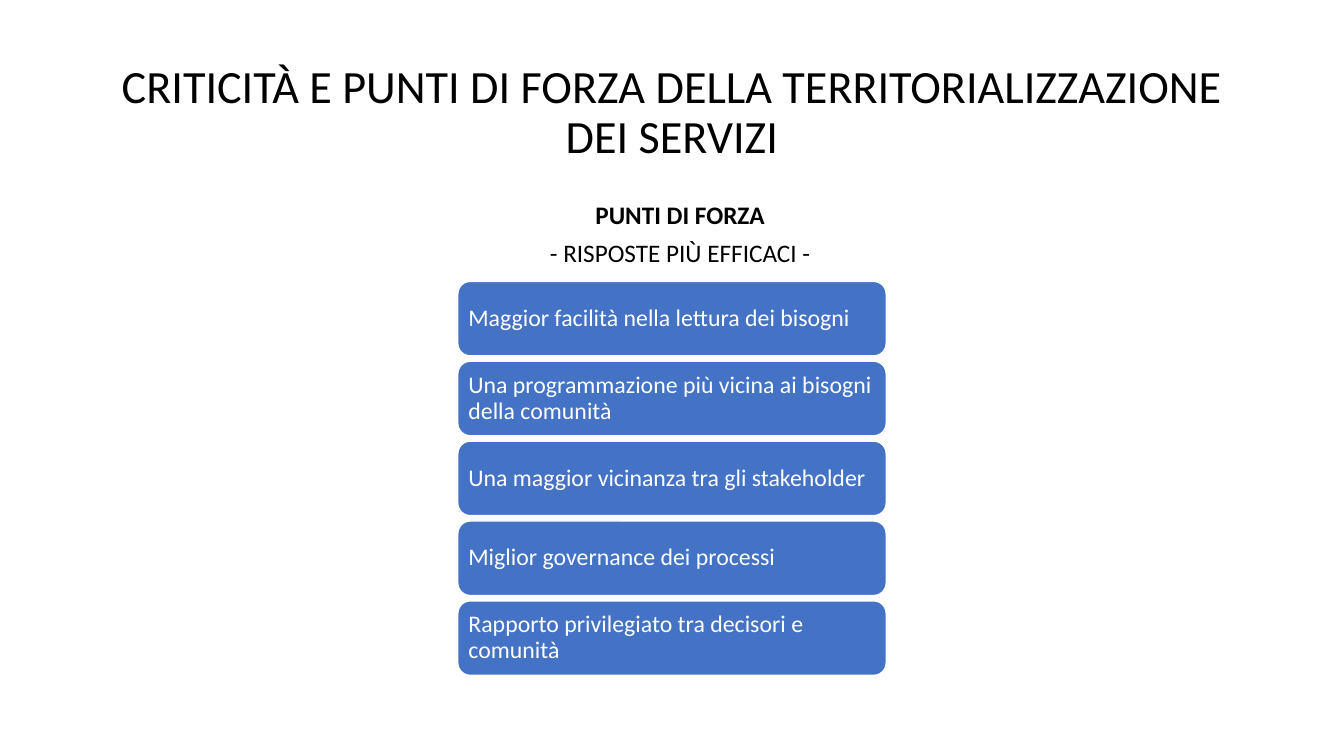
import pptx
import pptx.dml.color
import pptx.enum.shapes
import pptx.enum.text
import pptx.util

Pt = pptx.util.Pt
ALIGN = pptx.enum.text.PP_ALIGN
ANCHOR = pptx.enum.text.MSO_ANCHOR

BLACK = pptx.dml.color.RGBColor(0x00, 0x00, 0x00)
WHITE = pptx.dml.color.RGBColor(0xFF, 0xFF, 0xFF)
BLUE = pptx.dml.color.RGBColor(0x44, 0x72, 0xC4)
FONT = "Calibri"

STRENGTHS = [
    "Maggior facilità nella lettura dei bisogni",
    "Una programmazione più vicina ai bisogni della comunità",
    "Una maggior vicinanza tra gli stakeholder",
    "Miglior governance dei processi",
    "Rapporto privilegiato tra decisori e comunità",
]
CARD_LEFT, CARD_TOP = 327, 201
CARD_WIDTH, CARD_HEIGHT = 306, 53.2
CARD_STEP = 57.05


def prepare_frame(frame, anchor):
    frame.word_wrap = True
    frame.auto_size = pptx.enum.text.MSO_AUTO_SIZE.NONE
    frame.vertical_anchor = anchor


def write(paragraph, text, size, color, align, bold=False):
    paragraph.alignment = align
    paragraph.line_spacing = 0.9
    run = paragraph.add_run()
    run.text = text
    run.font.name = FONT
    run.font.size = Pt(size)
    run.font.bold = bold
    run.font.color.rgb = color


def add_title(slide, text):
    title = slide.shapes.title
    title.left, title.top = Pt(66), Pt(28.8)
    title.width, title.height = Pt(828), Pt(104.4)
    prepare_frame(title.text_frame, ANCHOR.MIDDLE)
    write(title.text_frame.paragraphs[0], text, 33, BLACK, ALIGN.CENTER)


def add_heading(slide, heading, subheading):
    box = slide.shapes.add_textbox(Pt(332.8), Pt(130.3), Pt(306), Pt(64.8))
    frame = box.text_frame
    prepare_frame(frame, ANCHOR.BOTTOM)
    write(frame.paragraphs[0], heading, 18, BLACK, ALIGN.CENTER, bold=True)
    write(frame.add_paragraph(), subheading, 18, BLACK, ALIGN.CENTER)
    for paragraph in frame.paragraphs:
        paragraph.space_before = Pt(7.5)


def add_card(slide, top, text):
    card = slide.shapes.add_shape(
        pptx.enum.shapes.MSO_SHAPE.ROUNDED_RECTANGLE,
        Pt(CARD_LEFT), Pt(top), Pt(CARD_WIDTH), Pt(CARD_HEIGHT))
    card.shadow.inherit = False
    card.fill.solid()
    card.fill.fore_color.rgb = BLUE
    card.line.color.rgb = WHITE
    card.line.width = Pt(1)
    frame = card.text_frame
    prepare_frame(frame, ANCHOR.MIDDLE)
    frame.margin_left = frame.margin_right = Pt(5)
    frame.margin_top = frame.margin_bottom = Pt(5)
    write(frame.paragraphs[0], text, 17, WHITE, ALIGN.LEFT)


def main():
    deck = pptx.Presentation()
    deck.slide_width, deck.slide_height = Pt(960), Pt(540)
    slide = deck.slides.add_slide(deck.slide_layouts[5])
    add_title(slide, "CRITICITÀ E PUNTI DI FORZA DELLA TERRITORIALIZZAZIONE DEI SERVIZI")
    add_heading(slide, "PUNTI DI FORZA", "- RISPOSTE PIÙ EFFICACI -")
    for index, strength in enumerate(STRENGTHS):
        add_card(slide, CARD_TOP + index * CARD_STEP, strength)
    deck.save("out.pptx")


if __name__ == "__main__":
    main()
